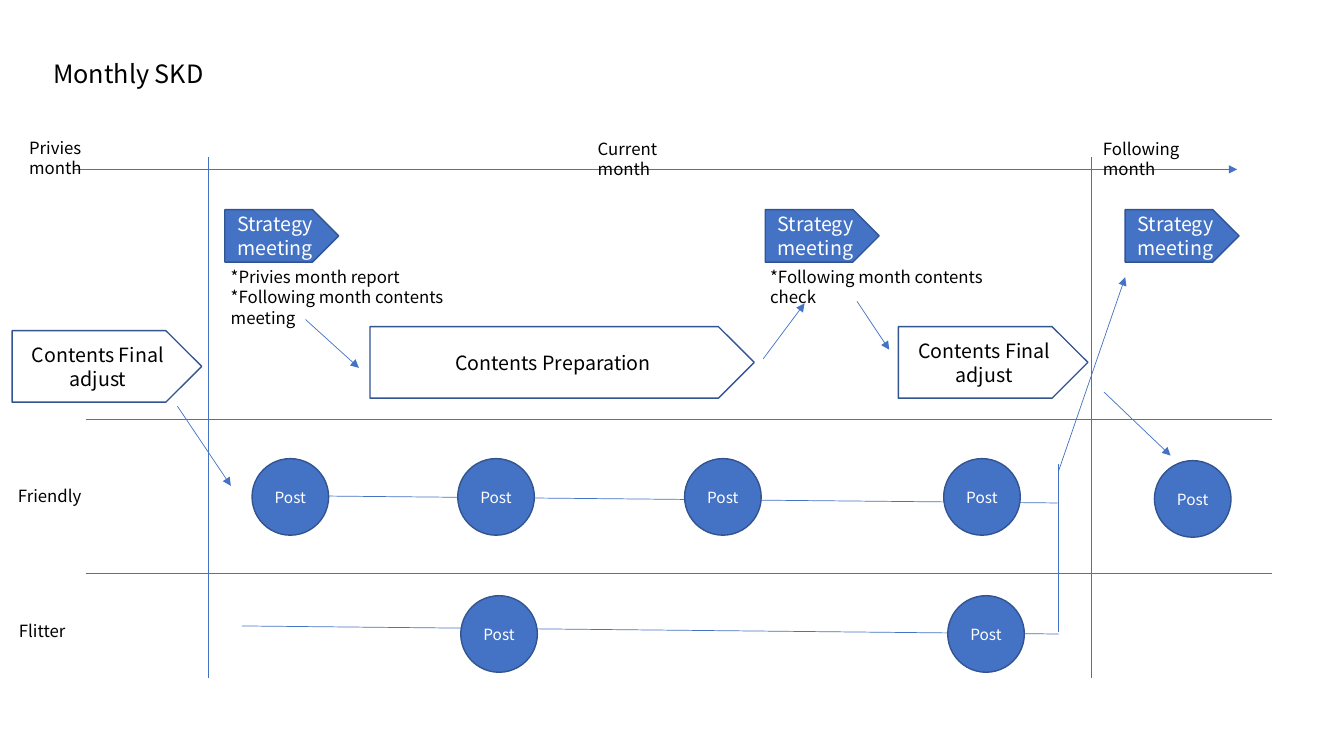
from dataclasses import dataclass

from lxml.etree import SubElement
from pptx import Presentation
from pptx.dml.color import RGBColor
from pptx.enum.shapes import MSO_CONNECTOR, MSO_SHAPE
from pptx.enum.text import MSO_ANCHOR, PP_ALIGN
from pptx.oxml.ns import qn
from pptx.util import Emu, Pt

EMU_PER_PX = 9144
FONT = "Noto Sans CJK JP"
BLUE, DARK_BLUE, BLACK, WHITE = "4472C4", "325491", "000000", "FFFFFF"
POST_SIZE = 76


@dataclass
class Line:
    x1: int
    y1: int
    x2: int
    y2: int
    arrow: bool = False


@dataclass
class Label:
    text: str
    left: int
    top: int
    width: int
    height: int = 30
    size: int = 12


@dataclass
class Step:
    text: str
    left: int
    top: int
    width: int
    height: int
    filled: bool = False


@dataclass
class Post:
    left: int
    top: int


LINES = [
    Line(240, 621, 1050, 629),
    Line(309, 492, 1049, 499),
    Line(72, 168, 1227, 168, arrow=True),
    *[Line(x, 156, x, 673) for x in (207, 1082)],
    *[Line(85, y, 1262, y) for y in (416, 569)],
    Line(303, 317, 356, 365, arrow=True),
    Line(757, 356, 798, 301, arrow=True),
    Line(850, 299, 882, 347, arrow=True),
    Line(1095, 389, 1161, 452, arrow=True),
    Line(176, 403, 229, 482, arrow=True),
    Line(1050, 627, 1050, 460),
    Line(1050, 467, 1116, 275, arrow=True),
]
LABELS = [
    Label("Monthly SKD", 43, 53, 174, 40, 18),
    Label("*Privies month report\n*Following month contents meeting", 219, 260, 295, 50),
    Label("Privies month", 19, 132, 125),
    Label("Current month", 583, 133, 131),
    Label("Following month", 1084, 133, 147),
    Label("*Following month contents check", 754, 260, 278),
    Label("Friendly", 8, 477, 96),
    Label("Flitter", 9, 611, 76),
]
STEPS = [
    *[Step("Strategy meeting", left, 208, 113, 52, True) for left in (223, 759, 1116)],
    *[Step("Contents Final adjust", left, top, 188, 71) for left, top in ((12, 328), (891, 324))],
    Step("Contents Preparation", 367, 324, 381, 71),
]
POSTS = [
    *[Post(left, 455) for left in (250, 454, 679, 936)],
    *[Post(left, 591) for left in (457, 940)],
    Post(1145, 457),
]


def px(value: int) -> Emu:
    return Emu(value * EMU_PER_PX)


def color(value: str) -> RGBColor:
    return RGBColor.from_string(value)


def write_text(shape, text: str, *, size: int, font_color: str = BLACK,
               align=PP_ALIGN.LEFT, anchor=MSO_ANCHOR.TOP) -> None:
    frame = shape.text_frame
    frame.word_wrap = True
    frame.vertical_anchor = anchor
    frame.text = text
    for paragraph in frame.paragraphs:
        paragraph.alignment = align
        for run in paragraph.runs:
            run.font.name = FONT
            run.font.size = Pt(size)
            run.font.color.rgb = color(font_color)
            east_asian = SubElement(run.font._element, qn("a:ea"))
            east_asian.set("typeface", FONT)


def draw_line(slide, line: Line) -> None:
    connector = slide.shapes.add_connector(
        MSO_CONNECTOR.STRAIGHT, px(line.x1), px(line.y1), px(line.x2), px(line.y2))
    connector.line.color.rgb = color(BLUE)
    connector.line.width = Pt(0.5)
    if line.arrow:
        SubElement(connector.line._get_or_add_ln(), qn("a:tailEnd")).set("type", "triangle")
    SubElement(connector._element.spPr, qn("a:effectLst"))


def draw_label(slide, label: Label) -> None:
    box = slide.shapes.add_textbox(
        px(label.left), px(label.top), px(label.width), px(label.height))
    write_text(box, label.text, size=label.size)


def draw_block(slide, kind, text: str, left: int, top: int, width: int, height: int,
               size: int, filled: bool) -> None:
    shape = slide.shapes.add_shape(kind, px(left), px(top), px(width), px(height))
    shape.shadow.inherit = False
    if filled:
        shape.fill.solid()
        shape.fill.fore_color.rgb = color(BLUE)
    else:
        shape.fill.background()
    shape.line.color.rgb = color(DARK_BLUE)
    shape.line.width = Pt(1)
    write_text(shape, text, size=size, font_color=WHITE if filled else BLACK,
               align=PP_ALIGN.CENTER, anchor=MSO_ANCHOR.MIDDLE)


def draw_step(slide, step: Step) -> None:
    draw_block(slide, MSO_SHAPE.PENTAGON, step.text, step.left, step.top,
               step.width, step.height, 14, step.filled)


def draw_post(slide, post: Post) -> None:
    draw_block(slide, MSO_SHAPE.OVAL, "Post", post.left, post.top,
               POST_SIZE, POST_SIZE, 11, True)


def main() -> None:
    presentation = Presentation()
    presentation.slide_width = px(1333)
    presentation.slide_height = px(750)
    slide = presentation.slides.add_slide(presentation.slide_layouts[6])
    for line in LINES:
        draw_line(slide, line)
    for label in LABELS:
        draw_label(slide, label)
    for step in STEPS:
        draw_step(slide, step)
    for post in POSTS:
        draw_post(slide, post)
    presentation.save("out.pptx")


if __name__ == "__main__":
    main()
